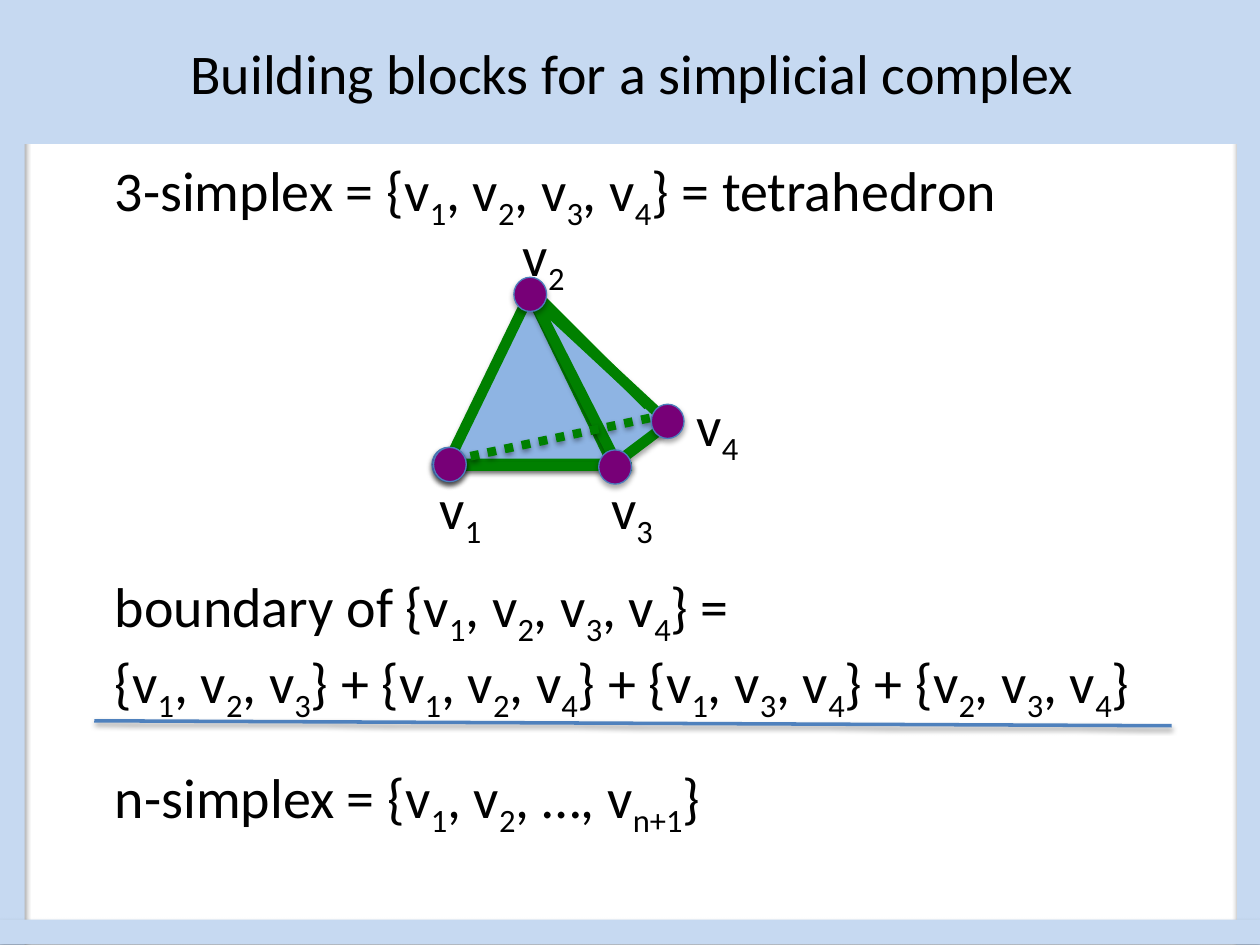
import pptx
import pptx.util
import pptx.dml.color
import pptx.enum.dml
import pptx.enum.shapes
import pptx.enum.text
import pptx.oxml
import pptx.oxml.ns

Cm, Pt = pptx.util.Cm, pptx.util.Pt
KINDS = pptx.enum.shapes.MSO_SHAPE
COLOURS = {"band": "C6D9F1", "face": "8EB4E3", "edge": "008000", "vertex": "770077",
           "rim": "4B7EBC", "rule": "4F81BD", "text": "000000"}
FONT, SIZE = "Calibri", 32


def vertex_set(names):
    return "{" + ", ".join(f"v|{name}|" for name in names) + "}"


TITLE = "Building blocks for a simplicial complex"
FACES = " + ".join(vertex_set(face) for face in ("123", "124", "134", "234"))
LINES = [
    (0, f"3-simplex = {vertex_set('1234')} = tetrahedron"),
    (194, f"boundary of {vertex_set('1234')} ="),
    (0, FACES),
    (22, "n-simplex = {v|1|, v|2|, …, v|n+1|}"),
]
TRIANGLES = [((9.02, 5.92, 3.33, 3.43), 0), ((11.18, 5.59, 1.32, 3.71), 323)]
EDGES = [((10.82, 5.94), (13.06, 8.18), 5.5, False), ((12.75, 9.4), (9.32, 9.4), 5, True)]
HIDDEN_EDGE = ((9.14, 9.27), (13.41, 8.36), 5, True)
BACK_DOTS = [(12.07, 9.07), (8.74, 9.02), (10.36, 5.59), (8.71, 9.02)]
FRONT_DOTS = [(8.74, 9.02), (13.13, 8.15)]
LABELS = {"4": (13.79, 7.75), "3": (12.07, 9.42), "1": (8.61, 9.42), "2": (10.29, 4.32)}
DIVIDER = ((1.9, 14.53), (23.62, 14.63), 2, True)
FRAME = [((0, 0, 0.5, 19.05), True), ((24.94, 0, 0.5, 19.05), True),
         ((0.05, 0, 25.43, 0.5), False), ((-0.03, 18.54, 25.43, 0.5), True)]


def colour(name):
    return pptx.dml.color.RGBColor.from_string(COLOURS[name])


def set_shadow(item, alpha, distance):
    properties = item._element.spPr
    for old in properties.findall(pptx.oxml.ns.qn("a:effectLst")):
        properties.remove(old)
    inner = ""
    if alpha:
        inner = (f'<a:outerShdw blurRad="{Pt(3.1)}" dist="{Pt(distance)}" dir="5400000" rotWithShape="0">'
                 f'<a:srgbClr val="000000"><a:alpha val="{alpha * 1000}"/></a:srgbClr></a:outerShdw>')
    properties.append(pptx.oxml.parse_xml(
        f'<a:effectLst {pptx.oxml.ns.nsdecls("a")}>{inner}</a:effectLst>'))


def add_solid(page, kind, place, fill, line=None, width=0, shadow=True):
    shape = page.shapes.add_shape(kind, *map(Cm, place))
    shape.fill.solid()
    shape.fill.fore_color.rgb = colour(fill)
    if line:
        shape.line.color.rgb = colour(line)
        shape.line.width = Pt(width)
    else:
        shape.line.fill.background()
    set_shadow(shape, 35 if shadow else 0, 1.8)
    return shape


def add_line(page, start, end, width, shadow, name="edge"):
    line = page.shapes.add_connector(
        pptx.enum.shapes.MSO_CONNECTOR.STRAIGHT, *map(Cm, start + end))
    line.line.color.rgb = colour(name)
    line.line.width = Pt(width)
    set_shadow(line, 38 if shadow else 0, 1.6)
    return line


def add_dots(page, places):
    for place in places:
        add_solid(page, KINDS.OVAL, place + (0.66, 0.69), "vertex", "rim", 0.75)


def write(para, text):
    for index, part in enumerate(text.split("|")):
        span = para.add_run()
        span.text = part
        span.font.name, span.font.size = FONT, Pt(SIZE)
        span.font.color.rgb = colour("text")
        if index % 2:
            span._r.get_or_add_rPr().set("baseline", "-25000")


def place_box(box, left, top, width, height):
    box.left, box.top, box.width, box.height = map(Cm, (left, top, width, height))
    box.text_frame.word_wrap = True
    box.text_frame.auto_size = pptx.enum.text.MSO_AUTO_SIZE.NONE


def fill_body(body):
    place_box(body, 2.06, 3, 21.72, 14.63)
    body.text_frame.vertical_anchor = pptx.enum.text.MSO_ANCHOR.TOP
    for index, (gap, text) in enumerate(LINES):
        para = body.text_frame.add_paragraph() if index else body.text_frame.paragraphs[0]
        para.space_before = Pt(gap)
        properties = para._p.get_or_add_pPr()
        properties.set("marL", "0")
        properties.set("indent", "0")
        properties.append(pptx.oxml.parse_xml(f'<a:buNone {pptx.oxml.ns.nsdecls("a")}/>'))
        write(para, text)


def draw_tetrahedron(page):
    for place, angle in TRIANGLES:
        add_solid(page, KINDS.ISOSCELES_TRIANGLE, place, "face", "edge", 6).rotation = angle
    for edge in EDGES:
        add_line(page, *edge)
    add_dots(page, BACK_DOTS)
    hidden = add_line(page, *HIDDEN_EDGE)
    hidden.line.dash_style = pptx.enum.dml.MSO_LINE.ROUND_DOT
    hidden.line._ln.find(pptx.oxml.ns.qn("a:prstDash")).set("val", "sysDot")
    add_dots(page, FRONT_DOTS)
    for name, (left, top) in LABELS.items():
        box = page.shapes.add_textbox(0, 0, 0, 0)
        place_box(box, left, top, 1.6, 1.45)
        write(box.text_frame.paragraphs[0], f"v|{name}|")


def fill_title(page):
    title = page.shapes.title
    place_box(title, 0.05, 0, 25.4, 2.9)
    title.fill.solid()
    title.fill.fore_color.rgb = colour("band")
    title.text_frame.vertical_anchor = pptx.enum.text.MSO_ANCHOR.MIDDLE
    para = title.text_frame.paragraphs[0]
    para.alignment = pptx.enum.text.PP_ALIGN.CENTER
    write(para, TITLE)
    page.shapes._spTree.append(title._element)


def main():
    deck = pptx.Presentation()
    deck.slide_width, deck.slide_height = Cm(25.4), Cm(19.05)
    page = deck.slides.add_slide(deck.slide_layouts[1])
    fill_body(page.placeholders[1])
    draw_tetrahedron(page)
    add_line(page, *DIVIDER, name="rule")
    for place, shadow in FRAME:
        add_solid(page, KINDS.RECTANGLE, place, "band", shadow=shadow)
    fill_title(page)
    deck.save("out.pptx")


if __name__ == "__main__":
    main()
